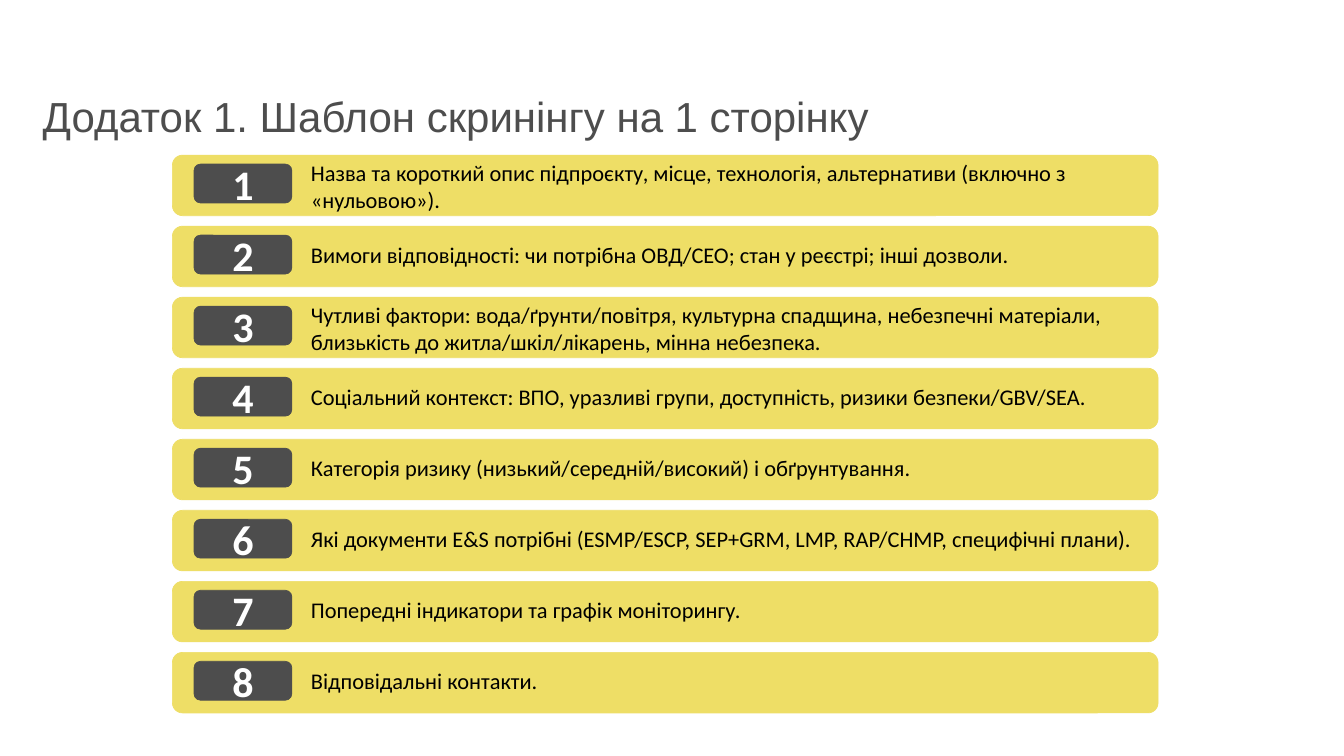
import pptx
import pptx.util
import pptx.dml.color
import pptx.enum.shapes
import pptx.enum.text

Cm = pptx.util.Cm
Pt = pptx.util.Pt
SHAPE = pptx.enum.shapes.MSO_SHAPE
ALIGN = pptx.enum.text.PP_ALIGN
ANCHOR = pptx.enum.text.MSO_ANCHOR
AUTO_SIZE = pptx.enum.text.MSO_AUTO_SIZE

HEADING = "Додаток 1. Шаблон скринінгу на 1 сторінку"
SECTIONS = [
    ("Назва та короткий опис підпроєкту, місце, технологія, альтернативи (включно з «нульовою»).", 2),
    ("Вимоги відповідності: чи потрібна ОВД/СЕО; стан у реєстрі; інші дозволи.", 1),
    ("Чутливі фактори: вода/ґрунти/повітря, культурна спадщина, небезпечні матеріали, "
     "близькість до житла/шкіл/лікарень, мінна небезпека.", 2),
    ("Соціальний контекст: ВПО, уразливі групи, доступність, ризики безпеки/GBV/SEA.", 1),
    ("Категорія ризику (низький/середній/високий) і обґрунтування.", 1),
    ("Які документи Е&S потрібні (ESMP/ESCP, SEP+GRM, LMP, RAP/CHMP, специфічні плани).", 1),
    ("Попередні індикатори та графік моніторингу.", 1),
    ("Відповідальні контакти.", 1),
]

YELLOW, GREY, BLACK, WHITE = "EEDE66", "4D4D4D", "000000", "FFFFFF"
HEADING_FONT = {"name": "Arial", "size": Pt(60), "bold": False}
NUMBER_FONT = {"name": "Calibri", "size": Pt(60), "bold": True}
SECTION_FONT = {"name": "Calibri", "size": Pt(32), "bold": False}

FIRST_TOP, PITCH = 7.82, 3.58
BAR_LEFT, BAR_WIDTH, BAR_HEIGHT = 8.69, 49.68, 3.05
BADGE_LEFT, BADGE_OFFSET, BADGE_WIDTH, BADGE_HEIGHT = 9.78, 0.45, 4.93, 1.96
TEXT_LEFT, TEXT_WIDTH, TEXT_MIDDLE = 15.42, 42.09, 1.43
TEXT_HEIGHTS = {1: 1.63, 2: 2.69}


def paint(color_format, hex_color):
    color_format.rgb = pptx.dml.color.RGBColor.from_string(hex_color)


def write(frame, text, font_values, hex_color, align, anchor):
    frame.word_wrap = True
    frame.vertical_anchor = anchor
    paragraph = frame.paragraphs[0]
    paragraph.text = text
    paragraph.alignment = align
    for attribute, value in font_values.items():
        setattr(paragraph.font, attribute, value)
    paint(paragraph.font.color, hex_color)
    return paragraph


def add_block(group, preset, left, top, width, height, hex_color, line_width):
    block = group.shapes.add_shape(preset, Cm(left), Cm(top), Cm(width), Cm(height))
    block.shadow.inherit = False
    block.fill.solid()
    paint(block.fill.fore_color, hex_color)
    paint(block.line.color, hex_color)
    block.line.width = Pt(line_width)
    return block


def add_section(slide, number, text, line_count):
    top = FIRST_TOP + (number - 1) * PITCH
    text_height = TEXT_HEIGHTS[line_count]
    group = slide.shapes.add_group_shape()
    add_block(group, SHAPE.ROUNDED_RECTANGLE, BAR_LEFT, top, BAR_WIDTH, BAR_HEIGHT, YELLOW, 1)
    description = add_block(group, SHAPE.RECTANGLE, TEXT_LEFT, top + TEXT_MIDDLE - text_height / 2,
                            TEXT_WIDTH, text_height, YELLOW, 0.75)
    write(description.text_frame, text, SECTION_FONT, BLACK, ALIGN.LEFT, ANCHOR.TOP)
    description.text_frame.auto_size = AUTO_SIZE.SHAPE_TO_FIT_TEXT
    badge = add_block(group, SHAPE.ROUNDED_RECTANGLE, BADGE_LEFT, top + BADGE_OFFSET,
                      BADGE_WIDTH, BADGE_HEIGHT, GREY, 1)
    write(badge.text_frame, str(number), NUMBER_FONT, WHITE, ALIGN.CENTER, ANCHOR.MIDDLE)


def main():
    deck = pptx.Presentation()
    deck.slide_width, deck.slide_height = Cm(67.74), Cm(38.1)
    slide = deck.slides.add_slide(deck.slide_layouts[5])
    heading = slide.shapes.title
    heading.left, heading.top, heading.width, heading.height = Cm(1.9), Cm(4.83), Cm(49.68), Cm(2.29)
    paragraph = write(heading.text_frame, HEADING, HEADING_FONT, GREY, ALIGN.LEFT, ANCHOR.MIDDLE)
    paragraph.line_spacing = 0.9
    heading.text_frame.auto_size = AUTO_SIZE.NONE
    for number, (text, line_count) in enumerate(SECTIONS, start=1):
        add_section(slide, number, text, line_count)
    deck.save("out.pptx")


if __name__ == "__main__":
    main()
